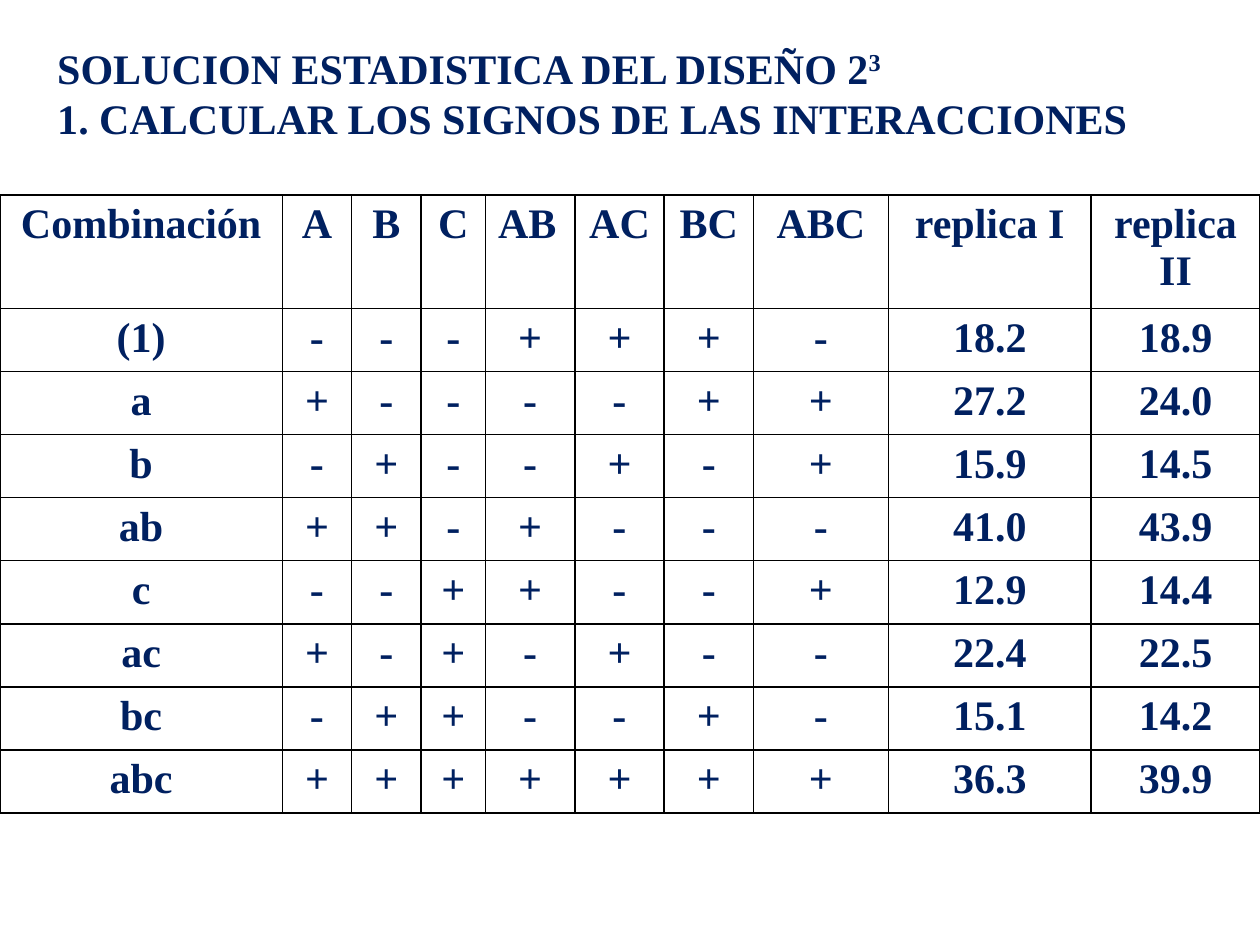
from lxml.etree import SubElement
from pptx import Presentation
from pptx.dml.color import RGBColor
from pptx.enum.text import MSO_ANCHOR, MSO_AUTO_SIZE, PP_ALIGN
from pptx.oxml.ns import qn
from pptx.util import Cm, Pt

NAVY = RGBColor(0x00, 0x20, 0x60)
BLACK = RGBColor(0, 0, 0)

EFFECTS = ["A", "B", "C", "AB", "AC", "BC", "ABC"]
RUNS = [
    ("(1)", "18.2", "18.9"),
    ("a", "27.2", "24.0"),
    ("b", "15.9", "14.5"),
    ("ab", "41.0", "43.9"),
    ("c", "12.9", "14.4"),
    ("ac", "22.4", "22.5"),
    ("bc", "15.1", "14.2"),
    ("abc", "36.3", "39.9"),
]
WIDTHS = [5.69, 1.4, 1.4, 1.3, 1.8, 1.8, 1.8, 2.72, 4.09, 3.4]
HEIGHTS = [2.29] + [1.27] * len(RUNS)


def sign(effect, combo):
    """Multiply the factor signs: each factor at its low level flips the result."""
    low = sum(factor not in combo for factor in effect.lower())
    return "-" if low % 2 else "+"


class Deck:
    """Holds the text style and the current slide."""

    font, size, color = "Times New Roman", Pt(24), NAVY

    def __init__(self):
        self.show = Presentation()
        self.show.slide_width, self.show.slide_height = Cm(25.4), Cm(19.05)
        self.slide = self.show.slides.add_slide(self.show.slide_layouts[5])

    def style(self, para, align):
        para.alignment = align
        font = para.font
        font.name, font.size, font.bold = self.font, self.size, True
        font.color.rgb = self.color

    def title(self, lines, box):
        """Fill the title; each line is a pair of text and superscript."""
        shape = self.slide.shapes.title
        shape.left, shape.top, shape.width, shape.height = map(Cm, box)
        frame = shape.text_frame
        frame.word_wrap = False
        frame.auto_size = MSO_AUTO_SIZE.SHAPE_TO_FIT_TEXT
        frame.vertical_anchor = MSO_ANCHOR.MIDDLE
        for i, (text, power) in enumerate(lines):
            para = frame.add_paragraph() if i else frame.paragraphs[0]
            para.add_run().text = text
            if power:
                run = para.add_run()
                run.text = power
                run._r.get_or_add_rPr().set("baseline", "30000")
            self.style(para, PP_ALIGN.LEFT)

    def border(self, cell):
        props = cell._tc.get_or_add_tcPr()
        for side in ("lnL", "lnR", "lnT", "lnB"):
            line = SubElement(props, qn(f"a:{side}"), w=str(Pt(1)))
            fill = SubElement(line, qn("a:solidFill"))
            SubElement(fill, qn("a:srgbClr"), val=str(BLACK))

    def table(self, rows, left, top, widths, heights):
        frame = self.slide.shapes.add_table(
            len(rows), len(widths), Cm(left), Cm(top),
            Cm(sum(widths)), Cm(sum(heights)))
        table = frame.table
        table.first_row = table.horz_banding = False
        for col, width in zip(table.columns, widths):
            col.width = Cm(width)
        for row, height, texts in zip(table.rows, heights, rows):
            row.height = Cm(height)
            for cell, text in zip(row.cells, texts):
                cell.text = text
                align = PP_ALIGN.LEFT if text == "AB" else PP_ALIGN.CENTER
                self.style(cell.text_frame.paragraphs[0], align)
                self.border(cell)
                cell.fill.background()


def main():
    deck = Deck()
    deck.title([
        ("SOLUCION ESTADISTICA DEL DISEÑO 2", "3"),
        ("1. CALCULAR LOS SIGNOS DE LAS INTERACCIONES", ""),
    ], (0.9, 0.71, 22.33, 2.31))
    rows = [["Combinación", *EFFECTS, "replica I", "replica II"]]
    for combo, first, second in RUNS:
        signs = [sign(effect, combo) for effect in EFFECTS]
        rows.append([combo, *signs, first, second])
    deck.table(rows, 0, 3.93, WIDTHS, HEIGHTS)
    deck.show.save("out.pptx")


if __name__ == "__main__":
    main()
